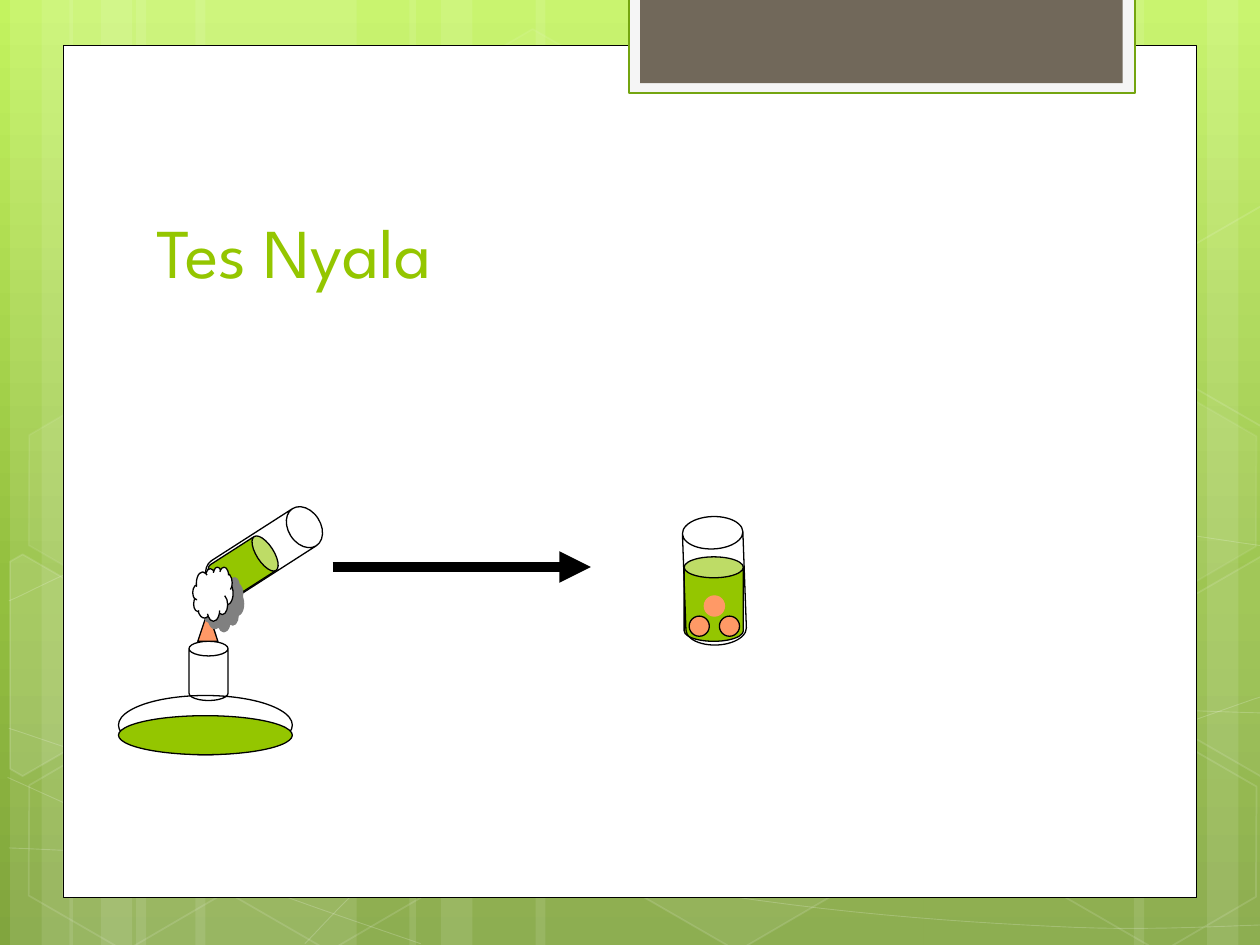
from collections import namedtuple
from copy import deepcopy
from math import cos, pi, sin, sqrt

from lxml.etree import SubElement
from pptx import Presentation
from pptx.dml.color import RGBColor
from pptx.enum.shapes import MSO_CONNECTOR as Connector, MSO_SHAPE as Shape
from pptx.enum.text import MSO_ANCHOR as Anchor, MSO_AUTO_SIZE as AutoSize, PP_ALIGN as Align
from pptx.oxml.ns import qn
from pptx.util import Cm, Pt

Box = namedtuple("Box", "left top width height")
Cell = namedtuple("Cell", "origin column row fill_opacity line_opacity")

CM_PER_INCH = 2.54
WHITE, BLACK, GREEN, ORANGE = "FFFFFF", "000000", "94C600", "FF9966"
BACKGROUND = [(0, "C3F35F"), (0.62, "93BF3F"), (1, "81A53E")]

HEXAGON_RADIUS = 0.88
HEXAGON_WIDTH, HEXAGON_HEIGHT = 1.75, 1.52
COLUMN_STEP, ROW_STEP = 1.62, 1.39
LEFT_COMB, RIGHT_COMB = (0.99, 1.11), (9.21, 1.12)
CLIP_LEFT, CLIP_RIGHT = 0.08, 10.09
HONEYCOMB = [
    Cell(LEFT_COMB, 2, 0, 4, 8),
    Cell(LEFT_COMB, 0, 2, 7, 8),
    Cell(LEFT_COMB, -0.5, 3, 10, 12),
    Cell(LEFT_COMB, 0, 4, 0, 12),
    Cell(LEFT_COMB, 1, 4, 0, 12),
    Cell(LEFT_COMB, 3, 4, 6, 12),
    Cell(RIGHT_COMB, 0.5, 1, 0, 12),
    Cell(RIGHT_COMB, 0, 2, 7, 8),
    Cell(RIGHT_COMB, -0.5, 3, 10, 12),
    Cell(RIGHT_COMB, 0.5, 3, 4, 12),
    Cell(RIGHT_COMB, 0, 4, 0, 12),
]

RISING_WAVE = [(0.07, 6.73), (1.9, 6.78), (4.58, 6.65), (7.92, 6.17), (10.07, 5.51)]
UPPER_ARCH = [(0.07, 4.77), (1.21, 4.31), (3.47, 3.87), (6.54, 3.87), (10.07, 4.34)]
CORNER_ARC = [(0.06, 6.17), (1.83, 6.95), (3.34, 7.49)]
FALLING_WAVE = [(0.07, 5.78), (1.28, 6.16), (3.57, 6.73), (6.28, 7.18), (8.53, 7.36),
                (10.07, 7.34)]
LOWER_ARCH = [(2.42, 7.49), (3.02, 6.91), (3.88, 6.39), (4.7, 6.09), (6.08, 5.78),
              (7.94, 5.62), (10.06, 5.66)]
WAVES = [RISING_WAVE, UPPER_ARCH, CORNER_ARC, FALLING_WAVE, LOWER_ARCH]


def length(inches):
    return Cm(inches * CM_PER_INCH)


def rgb(color):
    return RGBColor.from_string(color)


def paint(fill, color, opacity=100):
    if color is None or opacity == 0:
        fill.background()
        return
    fill.solid()
    fill.fore_color.rgb = rgb(color)
    if opacity < 100:
        value = next(fill._xPr.iter(qn("a:srgbClr")))
        SubElement(value, qn("a:alpha"), val=str(opacity * 1000))


def style(shape, fill=None, line=None, weight=0.75, fill_opacity=100, line_opacity=100):
    shape.shadow.inherit = False
    paint(shape.fill, fill, fill_opacity)
    paint(shape.line.fill, line, line_opacity)
    if line:
        shape.line.width = Pt(weight)
    return shape


def add_part(page, kind, box, x, y, width, height, rotation=0, adjust=(), **look):
    shape = page.shapes.add_shape(kind, length(box.left + x), length(box.top + y),
                                  length(width), length(height))
    shape.rotation = rotation
    for index, value in enumerate(adjust):
        shape.adjustments[index] = value
    return style(shape, **look)


def add_outline(page, box, points, close, **look):
    corners = [(length(box.left + x), length(box.top + y)) for x, y in points]
    builder = page.shapes.build_freeform(*corners[0])
    builder.add_line_segments(corners[1:], close=close)
    return style(builder.convert_to_shape(), **look)


def write(frame, text, font, size, color, align=Align.LEFT, anchor=Anchor.BOTTOM):
    frame.word_wrap = True
    frame.auto_size = AutoSize.NONE
    frame.vertical_anchor = anchor
    para = frame.paragraphs[0]
    para.alignment = align
    span = para.add_run()
    span.text = text
    span.font.name = font
    span.font.size = Pt(size)
    span.font.color.rgb = rgb(color)


def smooth_points(knots, steps=10):
    padded = [knots[0], *knots, knots[-1]]
    points = [knots[0]]
    for before, start, end, after in zip(padded, padded[1:], padded[2:], padded[3:]):
        for t in (step / steps for step in range(1, steps + 1)):
            points.append(tuple(
                b + t / 2 * (c - a + t * (2 * a - 5 * b + 4 * c - d
                                          + t * (3 * b - a - 3 * c + d)))
                for a, b, c, d in zip(before, start, end, after)))
    return points


def clipped_hexagon(center_x, center_y):
    points = []
    for corner in range(6):
        angle = pi / 6 + corner * pi / 3
        x = center_x + HEXAGON_RADIUS * cos(angle)
        y = center_y + HEXAGON_RADIUS * sin(angle)
        edge = min(max(x, CLIP_LEFT), CLIP_RIGHT)
        if edge != x:
            reach = HEXAGON_RADIUS - abs(edge - center_x) / sqrt(3)
            x, y = edge, center_y + (reach if y > center_y else -reach)
        points.append((x, y))
    return points


def fill_background(page):
    fill = page.background.fill
    fill.gradient()
    fill.gradient_angle = 270
    stop_list = next(page._element.iter(qn("a:gsLst")))
    stop_list.append(deepcopy(stop_list[-1]))
    for stop, (position, color) in zip(fill.gradient_stops, BACKGROUND):
        stop.position = position
        stop.color.rgb = rgb(color)


def draw_stripes(page, box):
    for start, widest, mirrored in [(0.08, 1.75, False), (0.55, 1.75, False),
                                    (-0.08, 1.75, True), (3.25, 3.08, False)]:
        for offset, width in [(1, widest), (0, 0.5), (0.25, 0.83)]:
            x = start + offset
            if mirrored:
                x = box.width - x - width
            add_part(page, Shape.RECTANGLE, box, x, 0, width, box.height,
                     fill=WHITE, fill_opacity=10)


def draw_waves(page, box):
    for knots in WAVES:
        add_outline(page, box, smooth_points(knots), False,
                    line=WHITE, weight=0.5, line_opacity=20)


def draw_honeycomb(page, box):
    for cell in HONEYCOMB:
        x = cell.origin[0] + cell.column * COLUMN_STEP
        y = cell.origin[1] + cell.row * ROW_STEP
        look = dict(fill=WHITE, fill_opacity=cell.fill_opacity,
                    line=WHITE, weight=1, line_opacity=cell.line_opacity)
        if CLIP_LEFT < x - HEXAGON_HEIGHT / 2 and x + HEXAGON_HEIGHT / 2 < CLIP_RIGHT:
            add_part(page, Shape.HEXAGON, box, x - HEXAGON_WIDTH / 2, y - HEXAGON_HEIGHT / 2,
                     HEXAGON_WIDTH, HEXAGON_HEIGHT, 30, (0.285, 1.155), **look)
        else:
            add_outline(page, box, clipped_hexagon(x, y), True, **look)


def draw_panel(page, box):
    add_part(page, Shape.RECTANGLE, box, 0, 0, box.width, box.height,
             fill=WHITE, line=BLACK, weight=0.5)
    add_part(page, Shape.RECTANGLE, box, 4.49, -0.38, 4.02, 0.76,
             fill="F5F5F5", line="74A510", weight=1.25)
    add_part(page, Shape.RECTANGLE, box, 4.58, -0.38, 3.83, 0.68, fill="71685A")


def draw_lamp(page, box):
    add_part(page, Shape.OVAL, box, 0, 0.67, box.width, 0.47, line=BLACK)
    add_part(page, Shape.OVAL, box, 0, 0.83, box.width, 0.31, fill=GREEN, line=BLACK)
    add_part(page, Shape.CAN, box, 0.56, 0.24, 0.31, 0.47, adjust=[0.376], line=BLACK)
    add_part(page, Shape.ISOSCELES_TRIANGLE, box, 0.63, 0, 0.16, 0.24,
             fill=ORANGE, line=BLACK)


def draw_heated_tube(page, box):
    tilt = 57.3
    add_part(page, Shape.CAN, box, 0.39, 0, 0.35, 1.02, tilt, [0.734], line=BLACK)
    add_part(page, Shape.CAN, box, 0.24, 0.35, 0.32, 0.55, tilt, [0.426],
             fill=GREEN, line=BLACK)
    smoke = add_part(page, Shape.CLOUD, box, 0, 0.62, 0.32, 0.43, fill=WHITE, line=BLACK)
    effects = next(smoke._element.iter(qn("a:effectLst")))
    shadow = SubElement(effects, qn("a:outerShdw"), dist=str(Pt(8.5)), dir="2700000",
                        algn="ctr", rotWithShape="0")
    SubElement(shadow, qn("a:srgbClr"), val="808080")


def draw_arrow(page, box):
    arrow = page.shapes.add_connector(Connector.STRAIGHT, length(box.left), length(box.top),
                                      length(box.left + box.width), length(box.top))
    paint(arrow.line.fill, BLACK)
    arrow.line.width = Pt(6)
    SubElement(arrow.line._get_or_add_ln(), qn("a:tailEnd"), type="triangle")
    SubElement(arrow._element.spPr, qn("a:effectLst"))


def draw_result_tube(page, box):
    add_part(page, Shape.CAN, box, 0, 0.32, 0.47, 0.67, adjust=[0.353], fill=GREEN, line=BLACK)
    add_part(page, Shape.CAN, box, 0, 0, box.width, box.height, 357.9, [0.536], line=BLACK)
    for x, y, line in [(0.04, 0.79, BLACK), (0.28, 0.79, BLACK), (0.16, 0.63, ORANGE)]:
        add_part(page, Shape.FLOWCHART_CONNECTOR, box, x, y, 0.16, 0.16,
                 fill=ORANGE, line=line)


def place_title(page, box, text):
    title = page.shapes.title
    title.left, title.top, title.width, title.height = map(length, box)
    write(title.text_frame, text, font="League Spartan", size=40, color=GREEN)
    page.shapes._spTree.append(title._element)


def main():
    deck = Presentation()
    deck.slide_width, deck.slide_height = length(10), length(7.5)
    page = deck.slides.add_slide(deck.slide_layouts[5])
    fill_background(page)
    for draw in (draw_stripes, draw_waves, draw_honeycomb):
        draw(page, Box(0, 0, 10, 7.5))
    draw_panel(page, Box(0.5, 0.36, 9, 6.76))
    draw_lamp(page, Box(0.94, 4.85, 1.38, 1.14))
    draw_heated_tube(page, Box(1.53, 3.88, 1.03, 1.05))
    draw_arrow(page, Box(2.64, 4.5, 2.05, 0))
    draw_result_tube(page, Box(5.43, 4.1, 0.48, 1.02))
    place_title(page, Box(1.14, 1.12, 7.68, 1.25), "Tes Nyala")
    deck.save("out.pptx")


if __name__ == "__main__":
    main()
